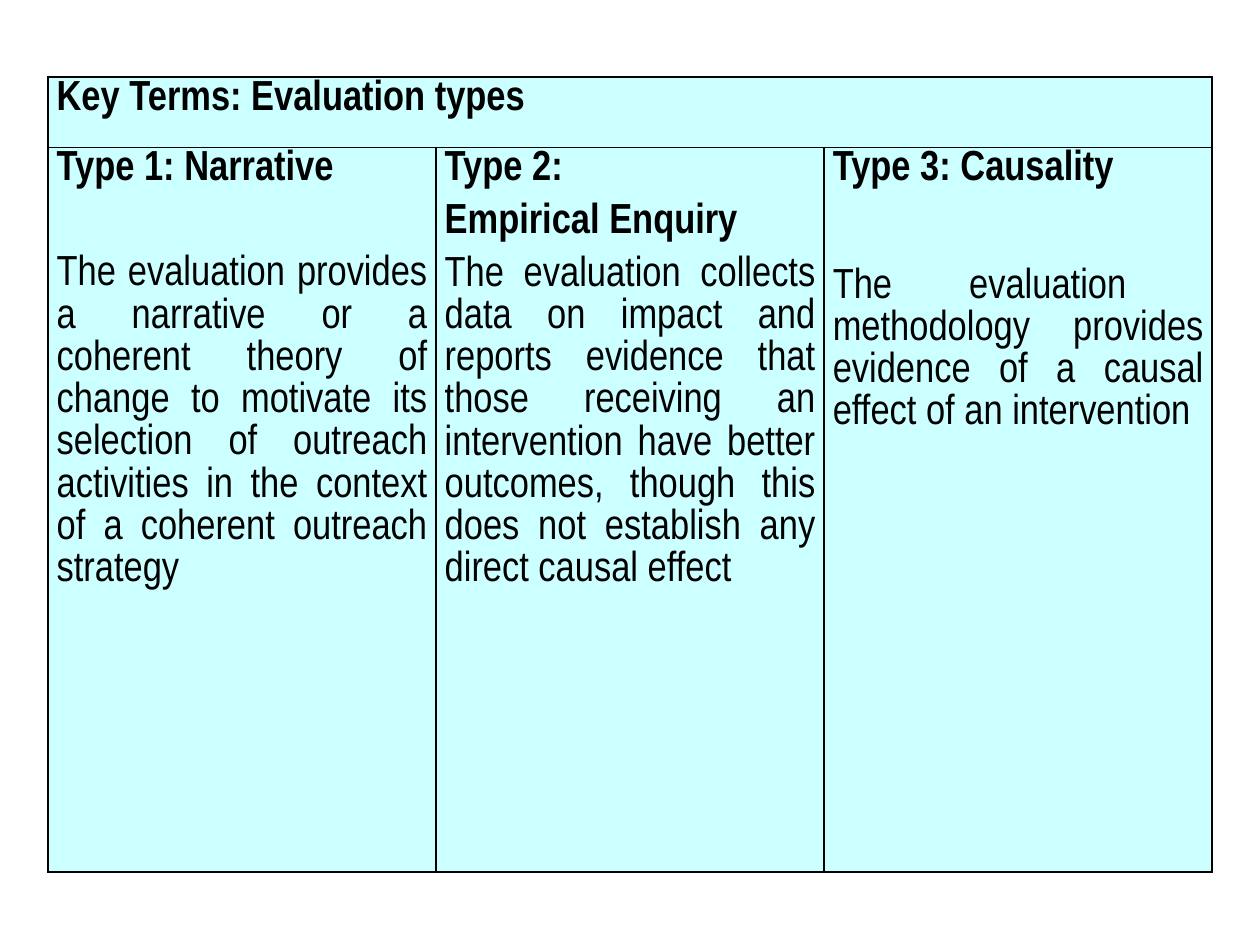
from lxml import etree
from pptx import Presentation
from pptx.dml.color import RGBColor
from pptx.enum import text
from pptx.oxml.ns import qn
from pptx.util import Inches, Pt

COLOURS = {"ink": "000000", "cell": "CCFFFF"}
HEADING = "Key Terms: Evaluation types"
# Each type: heading lines, gap in points below them, description
TYPES = [
    (["Type 1: Narrative"], 36,
     "The evaluation provides a narrative or a coherent theory of change to "
     "motivate its selection of outreach activities in the context of a "
     "coherent outreach strategy"),
    (["Type 2: ", "Empirical Enquiry "], 6,
     "The evaluation collects data on impact and reports evidence that those "
     "receiving an intervention have better outcomes, though this does not "
     "establish any direct causal effect"),
    (["Type 3: Causality "], 43,
     "The evaluation  methodology provides evidence of a causal effect of an "
     "intervention"),
]


class SlideBuilder:
    """Holds the text style and the page being filled."""

    font_name = "Arial Narrow"
    font_size = Pt(24)
    line_spacing = 1.07
    border_width = Pt(1)

    def __init__(self, page):
        self.page = page

    def table(self, left, top, column_widths, row_heights):
        frame = self.page.shapes.add_table(
            len(row_heights), len(column_widths), Inches(left), Inches(top),
            Inches(sum(column_widths)), Inches(sum(row_heights)))
        table = frame.table
        for column, width in zip(table.columns, column_widths):
            column.width = Inches(width)
        for row, height in zip(table.rows, row_heights):
            row.height = Inches(height)
        for cell in table.iter_cells():
            self.style_cell(cell)
        return table

    def style_cell(self, cell):
        cell.margin_left = cell.margin_right = Inches(0.07)
        cell.margin_top = cell.margin_bottom = 0
        properties = cell._tc.get_or_add_tcPr()
        for side in ("a:lnL", "a:lnR", "a:lnT", "a:lnB"):
            line = etree.SubElement(properties, qn(side), w=str(self.border_width))
            fill = etree.SubElement(line, qn("a:solidFill"))
            etree.SubElement(fill, qn("a:srgbClr"), val=COLOURS["ink"])
        cell.fill.solid()
        cell.fill.fore_color.rgb = RGBColor.from_string(COLOURS["cell"])

    def cell_text(self, cell, lines):
        """Fill a cell with (words, bold, points of space after) lines."""
        box = cell.text_frame
        for index, (words, bold, gap) in enumerate(lines):
            para = box.add_paragraph() if index else box.paragraphs[0]
            para.text = words
            para.alignment = text.PP_ALIGN.JUSTIFY
            para.line_spacing = self.line_spacing
            para.space_after = Pt(gap)
            para.font.name = self.font_name
            para.font.size = self.font_size
            para.font.bold = bold
            para.font.color.rgb = RGBColor.from_string(COLOURS["ink"])


def main():
    deck = Presentation()
    deck.slide_width, deck.slide_height = Inches(10), Inches(7.5)
    builder = SlideBuilder(deck.slides.add_slide(deck.slide_layouts[6]))

    table = builder.table(0.38, 0.61, [3.08] * len(TYPES), [0.56, 5.75])
    table.cell(0, 0).merge(table.cell(0, len(TYPES) - 1))
    builder.cell_text(table.cell(0, 0), [(HEADING, True, 6)])

    for column, (headings, gap, description) in enumerate(TYPES):
        lines = [(words, True, 6) for words in headings[:-1]]
        lines += [(headings[-1], True, gap), (description, False, 6)]
        builder.cell_text(table.cell(1, column), lines)

    deck.save("out.pptx")


if __name__ == "__main__":
    main()
